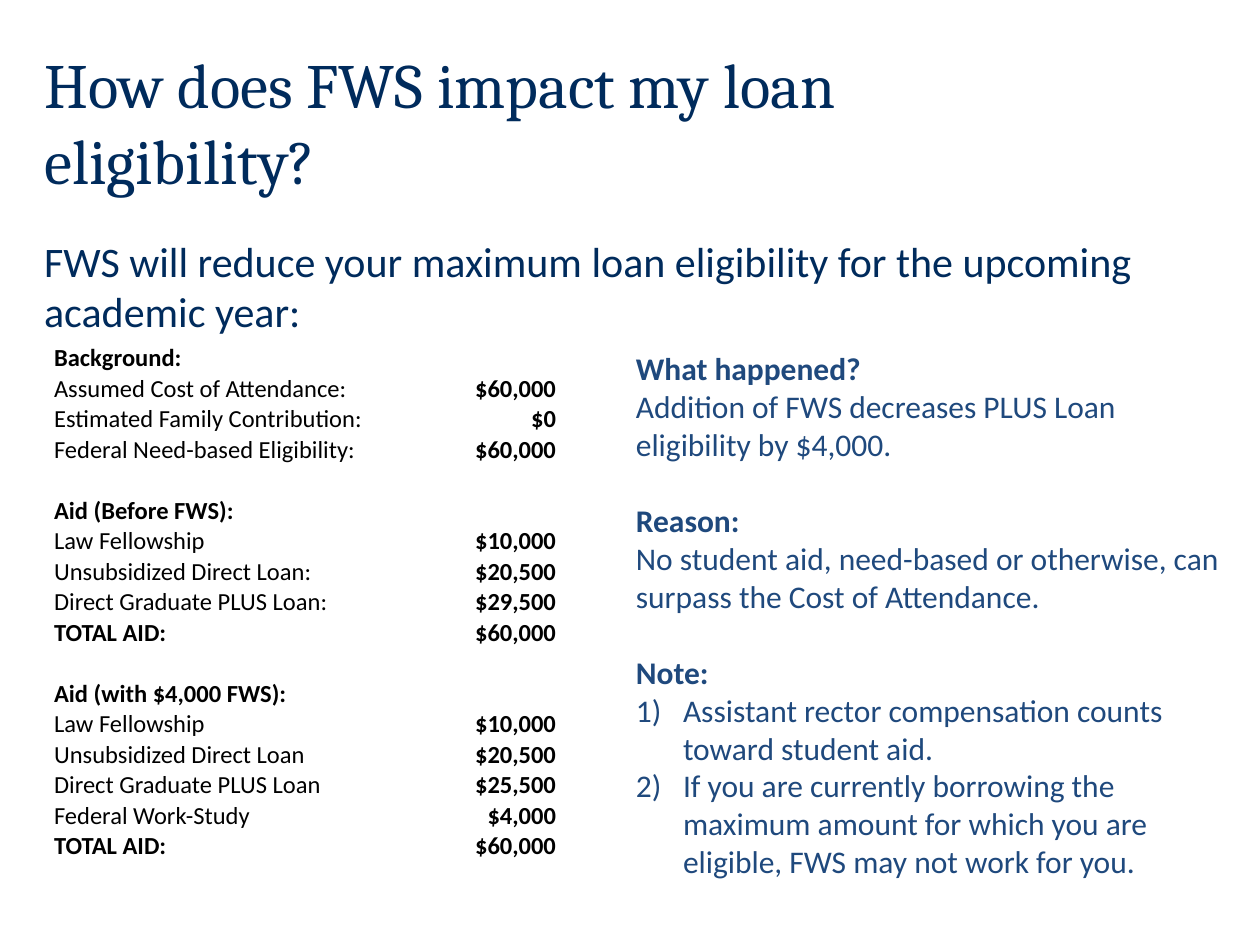
from lxml import etree
from pptx import Presentation
from pptx.dml.color import RGBColor
from pptx.enum.text import MSO_ANCHOR, MSO_AUTO_SIZE, PP_ALIGN
from pptx.oxml.ns import qn
from pptx.util import Cm, Pt

TOP, MIDDLE, BOTTOM = MSO_ANCHOR.TOP, MSO_ANCHOR.MIDDLE, MSO_ANCHOR.BOTTOM
LEFT, RIGHT = PP_ALIGN.LEFT, PP_ALIGN.RIGHT
NO_AUTOFIT = MSO_AUTO_SIZE.NONE

NAVY = RGBColor(0x00, 0x2B, 0x5C)
BLUE = RGBColor(0x1F, 0x49, 0x7D)
BLACK = RGBColor(0x00, 0x00, 0x00)

HEADING_FONT, BODY_FONT = "Cambria", "Calibri"
TABLE_SIZE = 14
NOTE_SIZE = 18
SECTION_GAP = Pt(22)
NUMBER_INDENT = Cm(0.95)

# Each block: heading, then (label, amount) rows
AID_BLOCKS = [
    ("Background:", [
        ("Assumed Cost of Attendance:", "$60,000"),
        ("Estimated Family Contribution:", "$0"),
        ("Federal Need-based Eligibility:", "$60,000"),
    ]),
    ("Aid (Before FWS):", [
        ("Law Fellowship", "$10,000"),
        ("Unsubsidized Direct Loan:", "$20,500"),
        ("Direct Graduate PLUS Loan:", "$29,500"),
        ("TOTAL AID:", "$60,000"),
    ]),
    ("Aid (with $4,000 FWS):", [
        ("Law Fellowship", "$10,000"),
        ("Unsubsidized Direct Loan", "$20,500"),
        ("Direct Graduate PLUS Loan", "$25,500"),
        ("Federal Work-Study", "$4,000"),
        ("TOTAL AID:", "$60,000"),
    ]),
]

# Each section: heading, paragraphs, numbered or not
SECTIONS = [
    ("What happened?",
     ["Addition of FWS decreases PLUS Loan eligibility by $4,000."], False),
    ("Reason:",
     ["No student aid, need-based or otherwise, can surpass the Cost of "
      "Attendance."], False),
    ("Note:",
     ["Assistant rector compensation counts toward student aid.",
      "If you are currently borrowing the maximum amount for which you are "
      "eligible, FWS may not work for you."], True),
]


def add_run(p, text, size, color, font=BODY_FONT, bold=False):
    r = p.add_run()
    r.text = text
    r.font.name = font
    r.font.size = Pt(size)
    r.font.bold = bold
    r.font.color.rgb = color


def set_frame(tf, anchor):
    tf.word_wrap = True
    tf.auto_size = NO_AUTOFIT
    tf.vertical_anchor = anchor


def number_paragraph(p):
    pPr = p._p.get_or_add_pPr()
    pPr.set("marL", str(NUMBER_INDENT))
    pPr.set("indent", str(-NUMBER_INDENT))
    etree.SubElement(pPr, qn("a:buAutoNum"), type="arabicParenR")


def add_title(s, text):
    sp = s.shapes.title
    sp.left, sp.top, sp.width, sp.height = Cm(0.64), Cm(0.8), Cm(20.32), Cm(3.18)
    set_frame(sp.text_frame, TOP)
    p = sp.text_frame.paragraphs[0]
    p.alignment = LEFT
    add_run(p, text, 36, NAVY, HEADING_FONT)


def add_intro(s, text):
    sp = s.shapes.add_textbox(Cm(0.64), Cm(4.45), Cm(23.93), Cm(2.06))
    tf = sp.text_frame
    set_frame(tf, TOP)
    tf.margin_top = Cm(0.3)
    add_run(tf.paragraphs[0], text, 24, NAVY)


def fill_cell(cell, text, bold, alignment):
    cell.fill.background()
    cell.vertical_anchor = BOTTOM
    cell.margin_left = cell.margin_right = Cm(0.02)
    cell.margin_top = Cm(0.01)
    cell.margin_bottom = 0
    p = cell.text_frame.paragraphs[0]
    p.alignment = alignment
    if text:
        add_run(p, text, TABLE_SIZE, BLACK, bold=bold)
    else:
        # Keeps empty cells as low as the filled ones
        etree.SubElement(p._p, qn("a:endParaRPr"), sz=str(TABLE_SIZE * 100))


def add_aid_table(s):
    rows = []
    for heading, items in AID_BLOCKS:
        if rows:
            rows.append(("", "", False))
        rows.append((heading, "", True))
        rows += [(label, amount, label.startswith("TOTAL"))
                 for label, amount in items]

    frame = s.shapes.add_table(len(rows), 2, Cm(1.07), Cm(6.91),
                               Cm(10.16), Cm(10.47))
    table = frame.table
    table.first_row = table.horz_banding = False
    table.columns[0].width, table.columns[1].width = Cm(7.42), Cm(2.74)
    for i, (label, amount, bold_label) in enumerate(rows):
        fill_cell(table.cell(i, 0), label, bold_label, LEFT)
        fill_cell(table.cell(i, 1), amount, True, RIGHT)


def add_explanation(s):
    sp = s.shapes.add_textbox(Cm(12.57), Cm(6.88), Cm(12.5), Cm(11.02))
    tf = sp.text_frame
    set_frame(tf, MIDDLE)
    for i, (heading, lines, numbered) in enumerate(SECTIONS):
        p = tf.add_paragraph() if i else tf.paragraphs[0]
        if i:
            p.space_before = SECTION_GAP
        add_run(p, heading, NOTE_SIZE, BLUE, bold=True)
        for line in lines:
            p = tf.add_paragraph()
            if numbered:
                number_paragraph(p)
            add_run(p, line, NOTE_SIZE, BLUE)


def main():
    prs = Presentation()
    prs.slide_width, prs.slide_height = Cm(25.4), Cm(19.05)
    s = prs.slides.add_slide(prs.slide_layouts[5])

    # Heading and lead-in
    add_title(s, "How does FWS impact my loan eligibility?")
    add_intro(s, "FWS will reduce your maximum loan eligibility for the "
                 "upcoming academic year:")

    # Figures on the left, explanation on the right
    add_aid_table(s)
    add_explanation(s)

    prs.save("out.pptx")


if __name__ == "__main__":
    main()
